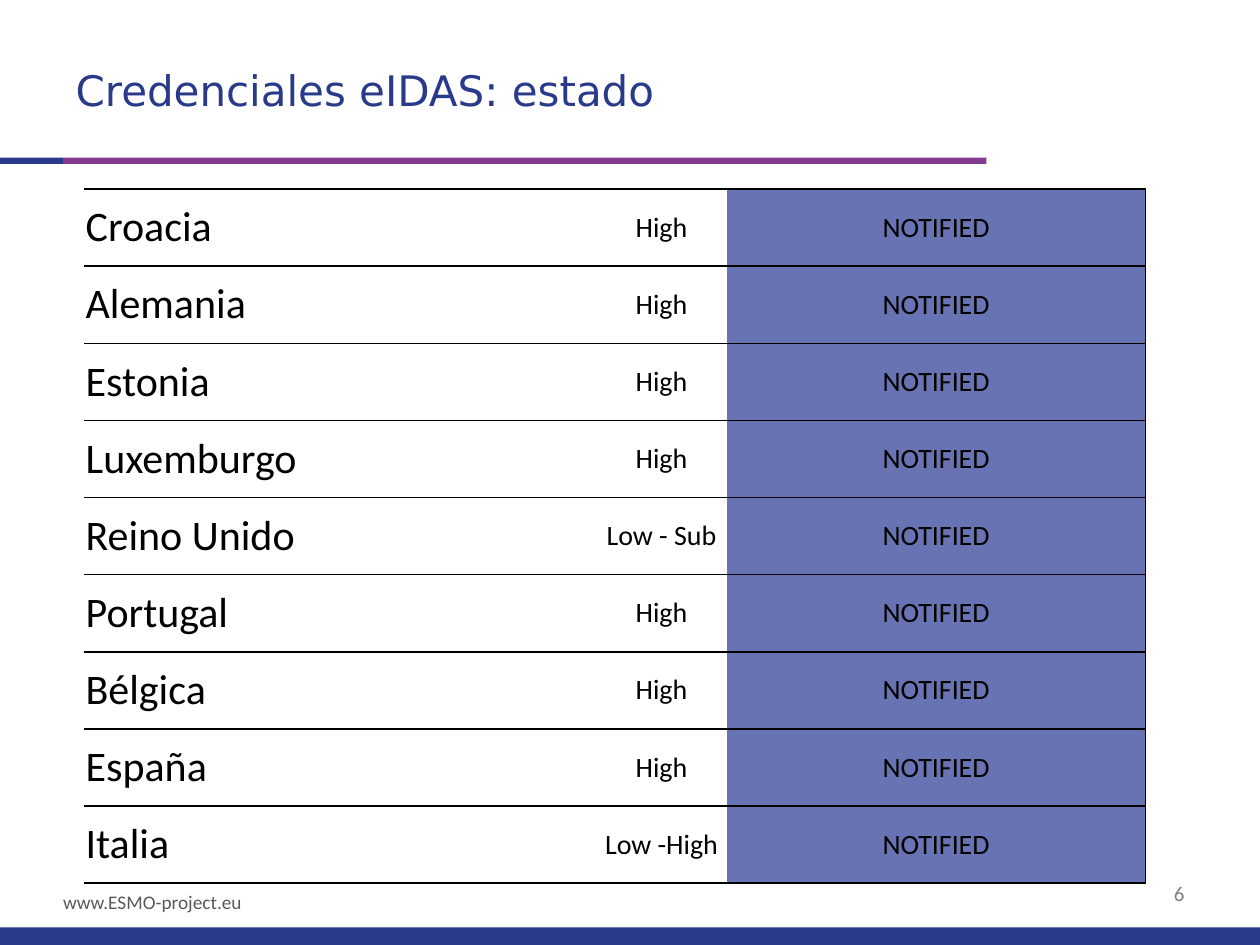
from dataclasses import dataclass

from lxml.etree import SubElement
from pptx import Presentation
from pptx.dml.color import RGBColor
from pptx.enum.shapes import MSO_SHAPE
from pptx.enum.text import MSO_ANCHOR, PP_ALIGN
from pptx.oxml.ns import qn
from pptx.util import Inches, Pt

W, H = 10, 7.5
BLUE, PURPLE, LILAC = "2A3A8B", "823B8F", "6773B3"
BLACK, WHITE = "000000", "FFFFFF"


@dataclass
class Bar:
    left: float
    top: float
    width: float
    height: float
    color: str


@dataclass
class Country:
    name: str
    level: str = "High"
    status: str = "NOTIFIED"


@dataclass
class Column:
    field: str
    width: float
    size: int
    align: PP_ALIGN
    fill: str
    right_edge: bool = False


BARS = [
    Bar(0.05, 1.25 / H, 0.733, 0.05 / H, PURPLE),
    Bar(0, 1.25 / H, 0.05, 0.05 / H, BLUE),
    Bar(0, 7.36 / H, 1, 0.14 / H, BLUE),
]
COUNTRIES = [
    Country("Croacia"),
    Country("Alemania"),
    Country("Estonia"),
    Country("Luxemburgo"),
    Country("Reino Unido", "Low - Sub"),
    Country("Portugal"),
    Country("Bélgica"),
    Country("España"),
    Country("Italia", "Low -High"),
]
COLUMNS = [
    Column("name", 4.06, 24, PP_ALIGN.LEFT, WHITE),
    Column("level", 1.04, 16, PP_ALIGN.CENTER, WHITE),
    Column("status", 3.32, 16, PP_ALIGN.CENTER, LILAC, True),
]


def rgb(color: str) -> RGBColor:
    return RGBColor.from_string(color)


def write(tf, text: str, *, size: float, color: str = BLACK, font: str = "Calibri",
          align: PP_ALIGN = PP_ALIGN.LEFT) -> None:
    p = tf.paragraphs[0]
    p.alignment = align
    r = p.add_run()
    r.text = text
    r.font.size, r.font.name = Pt(size), font
    r.font.color.rgb = rgb(color)


def draw_bar(slide, bar: Bar) -> None:
    sp = slide.shapes.add_shape(
        MSO_SHAPE.RECTANGLE, Inches(bar.left * W), Inches(bar.top * H),
        Inches(bar.width * W), Inches(bar.height * H))
    sp.shadow.inherit = False
    sp.fill.solid()
    sp.fill.fore_color.rgb = rgb(bar.color)
    sp.line.fill.background()


def draw_label(slide, box: tuple, text: str, anchor: MSO_ANCHOR, **fmt) -> None:
    tf = slide.shapes.add_textbox(*map(Inches, box)).text_frame
    tf.word_wrap = True
    tf.vertical_anchor = anchor
    write(tf, text, **fmt)


def set_borders(cell, right_edge: bool) -> None:
    tc_pr = cell._tc.get_or_add_tcPr()
    sides = {"lnL": False, "lnR": right_edge, "lnT": True, "lnB": True}
    for i, (tag, shown) in enumerate(sides.items()):
        ln = SubElement(tc_pr, qn(f"a:{tag}"), w=str(Pt(1)))
        if shown:
            fill = SubElement(ln, qn("a:solidFill"))
            SubElement(fill, qn("a:srgbClr"), val=BLACK)
        else:
            SubElement(ln, qn("a:noFill"))
        tc_pr.insert(i, ln)


def draw_cell(cell, text: str, col: Column) -> None:
    cell.margin_left = cell.margin_right = Inches(0.01)
    cell.margin_top = cell.margin_bottom = 0
    cell.vertical_anchor = MSO_ANCHOR.MIDDLE
    cell.fill.solid()
    cell.fill.fore_color.rgb = rgb(col.fill)
    set_borders(cell, col.right_edge)
    write(cell.text_frame, text, size=col.size, align=col.align)


def draw_table(slide, left: float, top: float, height: float) -> None:
    width = sum(c.width for c in COLUMNS)
    table = slide.shapes.add_table(
        len(COUNTRIES), len(COLUMNS), Inches(left), Inches(top),
        Inches(width), Inches(height)).table
    table.first_row = table.horz_banding = False
    for j, col in enumerate(COLUMNS):
        table.columns[j].width = Inches(col.width)
        for i, country in enumerate(COUNTRIES):
            draw_cell(table.cell(i, j), getattr(country, col.field), col)


def draw_title(slide, text: str) -> None:
    sp = slide.shapes.title
    sp.left, sp.top, sp.width, sp.height = map(Inches, (0.5, 0.43, 6.42, 0.49))
    tf = sp.text_frame
    tf.vertical_anchor = MSO_ANCHOR.TOP
    tf.margin_top = Inches(0.08)
    write(tf, text, size=24, color=BLUE, font="DejaVu Sans")


def main() -> None:
    prs = Presentation()
    prs.slide_width, prs.slide_height = Inches(W), Inches(H)
    slide = prs.slides.add_slide(prs.slide_layouts[5])
    for bar in BARS:
        draw_bar(slide, bar)
    draw_label(slide, (8.75, 6.94, 0.75, 0.3), "6", MSO_ANCHOR.TOP,
               size=12, color="808080", align=PP_ALIGN.RIGHT)
    draw_label(slide, (0.25, 7.03, 1.92, 0.26), "www.ESMO-project.eu", MSO_ANCHOR.MIDDLE,
               size=11, color="595959", align=PP_ALIGN.CENTER)
    draw_title(slide, "Credenciales eIDAS: estado")
    draw_table(slide, 0.67, 1.5, 5.51)
    prs.save("out.pptx")


if __name__ == "__main__":
    main()
